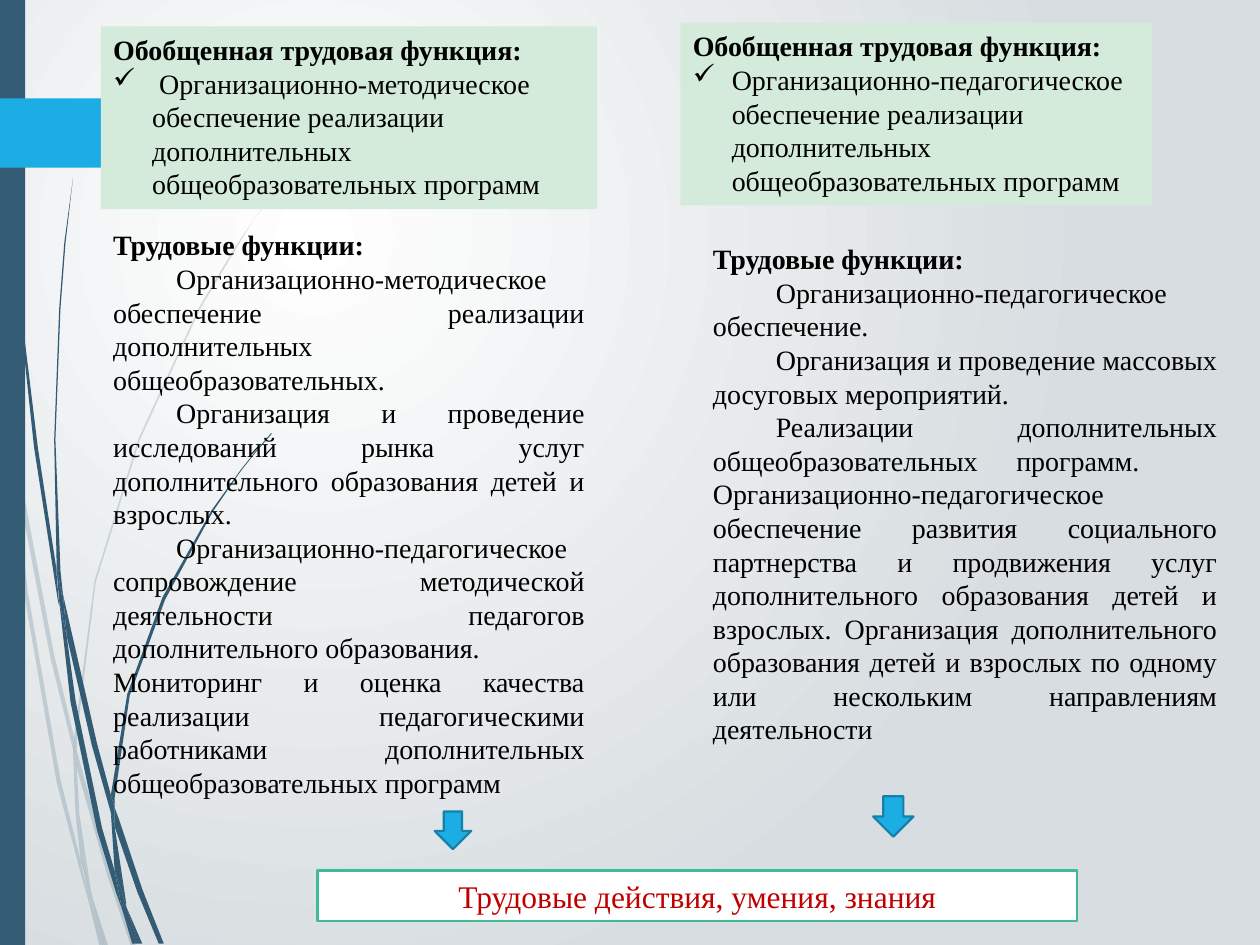
from lxml import etree
from pptx import Presentation
from pptx.dml.color import RGBColor
from pptx.enum import shapes, text
from pptx.oxml.ns import qn
from pptx.util import Inches, Pt

NAVY = RGBColor(0x33, 0x5B, 0x74)
BLUE = RGBColor(0x1C, 0xAD, 0xE4)
DARK_BLUE = RGBColor(0x15, 0x80, 0xA9)
MINT = RGBColor(0xD4, 0xEB, 0xDB)
GREEN = RGBColor(0x42, 0xBA, 0x97)
RED = RGBColor(0xC0, 0x00, 0x00)
BLACK = RGBColor(0, 0, 0)
WHITE = RGBColor(0xFF, 0xFF, 0xFF)
GREY = RGBColor(0xD7, 0xDD, 0xE0)
FONT = "Times New Roman"

HEADER_TITLE = "Обобщенная трудовая функция:"
HEADERS = [
    ((0.8, 0.21, 3.94, 1.45),
     " Организационно-методическое обеспечение реализации дополнительных общеобразовательных программ"),
    ((5.4, 0.18, 3.74, 1.45),
     "Организационно-педагогическое обеспечение реализации дополнительных общеобразовательных программ"),
]
FUNCTIONS_TITLE = "Трудовые функции:"
FUNCTIONS = [
    ((0.8, 1.76, 3.94, 4.68), [
        "\tОрганизационно-методическое обеспечение реализации дополнительных общеобразовательных.",
        "\tОрганизация и проведение исследований рынка услуг дополнительного образования детей и взрослых.",
        "\tОрганизационно-педагогическое сопровождение методической деятельности педагогов "
        "дополнительного образования.",
        "Мониторинг и оценка качества реализации педагогическими работниками дополнительных "
        "общеобразовательных программ",
    ]),
    ((5.56, 1.87, 4.2, 4.44), [
        "\tОрганизационно-педагогическое обеспечение.",
        "\tОрганизация и проведение массовых досуговых мероприятий.",
        "\tРеализации дополнительных общеобразовательных программ. "
        "\tОрганизационно-педагогическое обеспечение развития социального партнерства и продвижения "
        "услуг дополнительного образования детей и взрослых. Организация дополнительного образования "
        "детей и взрослых по одному или нескольким направлениям деятельности",
    ]),
]
RESULT = "Трудовые действия, умения, знания"
ARROWS = [(3.45, 6.44, 0.29, 0.3), (6.93, 6.32, 0.32, 0.32)]

# Outlines in hundredths of an inch
PALE_STEMS = [
    [(8, 350), (6, 322), (0, 282), (0, 299), (7, 344)],
    [(40, 522), (59, 599), (59, 586), (43, 520), (10, 345), (12, 376)],
    [(64, 607), (61, 596), (61, 610), (85, 694), (104, 751), (108, 751), (88, 692)],
    [(83, 751), (86, 751), (73, 711)],
    [(64, 683), (48, 619), (22, 469), (12, 376), (8, 350), (19, 470), (45, 621), (64, 693),
     (70, 714), (69, 707)],
    [(58, 599), (60, 646), (64, 683), (67, 692), (73, 711), (72, 706), (63, 646), (61, 610), (61, 608)],
    [(61, 584), (76, 462), (111, 349), (159, 245), (187, 198), (201, 175), (217, 154), (217, 153),
     (201, 175), (186, 197), (158, 244), (110, 348), (75, 461), (59, 584), (59, 586), (61, 596)],
    [(70, 714), (79, 751), (82, 751)],
    [(61, 608), (61, 610), (61, 596), (59, 586), (58, 599)],
    [(67, 692), (65, 683), (69, 707), (70, 714), (82, 751), (83, 751), (73, 711)],
]
DARK_STEMS = [
    [(5, 110), (14, 233), (27, 355), (46, 477), (47, 481), (45, 457), (45, 453), (30, 355), (15, 232),
     (6, 109), (4, 48), (3, 0), (2, 0), (3, 48)],
    [(73, 592), (88, 645), (88, 633), (88, 631), (77, 590), (50, 472), (53, 505)],
    [(94, 649), (91, 641), (91, 656), (109, 708), (126, 749), (130, 749), (113, 706)],
    [(91, 691), (81, 657), (60, 556), (53, 505), (47, 477), (56, 557), (77, 659), (92, 708),
     (97, 722), (96, 717)],
    [(50, 472), (48, 453), (44, 349), (48, 245), (52, 193), (58, 141), (51, 193), (47, 245),
     (43, 349), (45, 449), (49, 472)],
    [(110, 749), (113, 749), (100, 719)],
    [(47, 477), (53, 505), (50, 472), (49, 472), (45, 449), (45, 453)],
    [(91, 633), (103, 552), (131, 476), (169, 406), (191, 374), (203, 359), (216, 344), (215, 344),
     (203, 358), (191, 373), (168, 405), (129, 474), (101, 551), (88, 631), (91, 641)],
    [(97, 722), (105, 749), (108, 749)],
    [(88, 645), (91, 691), (96, 706), (100, 719), (100, 716), (91, 656), (90, 651)],
    [(88, 645), (90, 651), (91, 656), (91, 641), (88, 631), (88, 633)],
    [(96, 706), (91, 691), (96, 717), (97, 722), (108, 749), (110, 749), (100, 719)],
]
TAG = [(149, 107), (124, 132), (121, 133), (0, 133), (0, 78), (121, 78), (124, 79), (149, 104)]


def style(shape, fill, line=None, opacity=None):
    shape.shadow.inherit = False
    shape.fill.solid()
    shape.fill.fore_color.rgb = fill
    if opacity is not None:
        color = next(shape.element.spPr.iter(qn("a:srgbClr")))
        etree.SubElement(color, qn("a:alpha"), val=str(opacity * 1000))
    if line is None:
        shape.line.fill.background()
    else:
        shape.line.color.rgb = line
        shape.line.width = Pt(1.25)
    return shape


def add_outline(owner, points, fill, opacity=None):
    builder = owner.build_freeform(*points[0], scale=Inches(0.01))
    builder.add_line_segments(points[1:], close=True)
    return style(builder.convert_to_shape(), fill, opacity=opacity)


def add_box(slide, box, fill, line=None, kind=shapes.MSO_SHAPE.RECTANGLE):
    return style(slide.shapes.add_shape(kind, *map(Inches, box)), fill, line)


def start_frame(shape, anchor=text.MSO_ANCHOR.TOP):
    frame = shape.text_frame
    frame.word_wrap = True
    frame.auto_size = text.MSO_AUTO_SIZE.SHAPE_TO_FIT_TEXT
    frame.vertical_anchor = anchor
    return frame


def add_text(frame, words, size=16, color=BLACK, bold=False, align=text.PP_ALIGN.LEFT, bullet=None):
    first = frame.paragraphs[0]
    paragraph = frame.add_paragraph() if first.runs else first
    paragraph.alignment = align
    run = paragraph.add_run()
    run.text = words
    run.font.name, run.font.size, run.font.bold = FONT, Pt(size), bold
    run.font.color.rgb = color
    properties = paragraph._p.get_or_add_pPr()
    properties.set("defTabSz", str(Inches(0.5)))
    if bullet:
        properties.set("marL", str(Inches(0.31)))
        properties.set("indent", str(Inches(-0.31)))
        etree.SubElement(properties, qn("a:buChar"), char=bullet)


def set_radial_background(slide, inner, outer):
    fill = slide.background.fill
    fill.gradient()
    for stop, color, position in zip(fill.gradient_stops, (inner, outer), (0, 1)):
        stop.color.rgb = color
        stop.position = position
    gradient = next(slide.element.iter(qn("a:gradFill")))
    gradient.remove(gradient.find(qn("a:lin")))
    radial = etree.SubElement(gradient, qn("a:path"), {"path": "circle"})
    etree.SubElement(radial, qn("a:fillToRect"), l="50000", t="50000", r="100000", b="100000")


def main():
    presentation = Presentation()
    presentation.slide_width, presentation.slide_height = Inches(10), Inches(7.5)
    slide = presentation.slides.add_slide(presentation.slide_layouts[6])
    set_radial_background(slide, WHITE, GREY)

    for stems, opacity in ((PALE_STEMS, 20), (DARK_STEMS, None)):
        group = slide.shapes.add_group_shape()
        for points in stems:
            add_outline(group.shapes, points, NAVY, opacity)
    add_box(slide, (0, 0, 0.2, 7.5), NAVY)
    add_outline(slide.shapes, TAG, BLUE)

    for box, words in HEADERS:
        frame = start_frame(add_box(slide, box, MINT))
        add_text(frame, HEADER_TITLE, bold=True)
        add_text(frame, words, bullet="✓")

    for box, paragraphs in FUNCTIONS:
        frame = start_frame(slide.shapes.add_textbox(*map(Inches, box)))
        add_text(frame, FUNCTIONS_TITLE, bold=True)
        for words in paragraphs:
            add_text(frame, words, align=text.PP_ALIGN.JUSTIFY)

    result = add_box(slide, (2.52, 6.91, 6.03, 0.4), WHITE, GREEN)
    add_text(start_frame(result, text.MSO_ANCHOR.MIDDLE), RESULT, size=18, color=RED,
             align=text.PP_ALIGN.CENTER)
    for box in ARROWS:
        add_box(slide, box, BLUE, DARK_BLUE, shapes.MSO_SHAPE.DOWN_ARROW)

    presentation.save("out.pptx")


if __name__ == "__main__":
    main()
